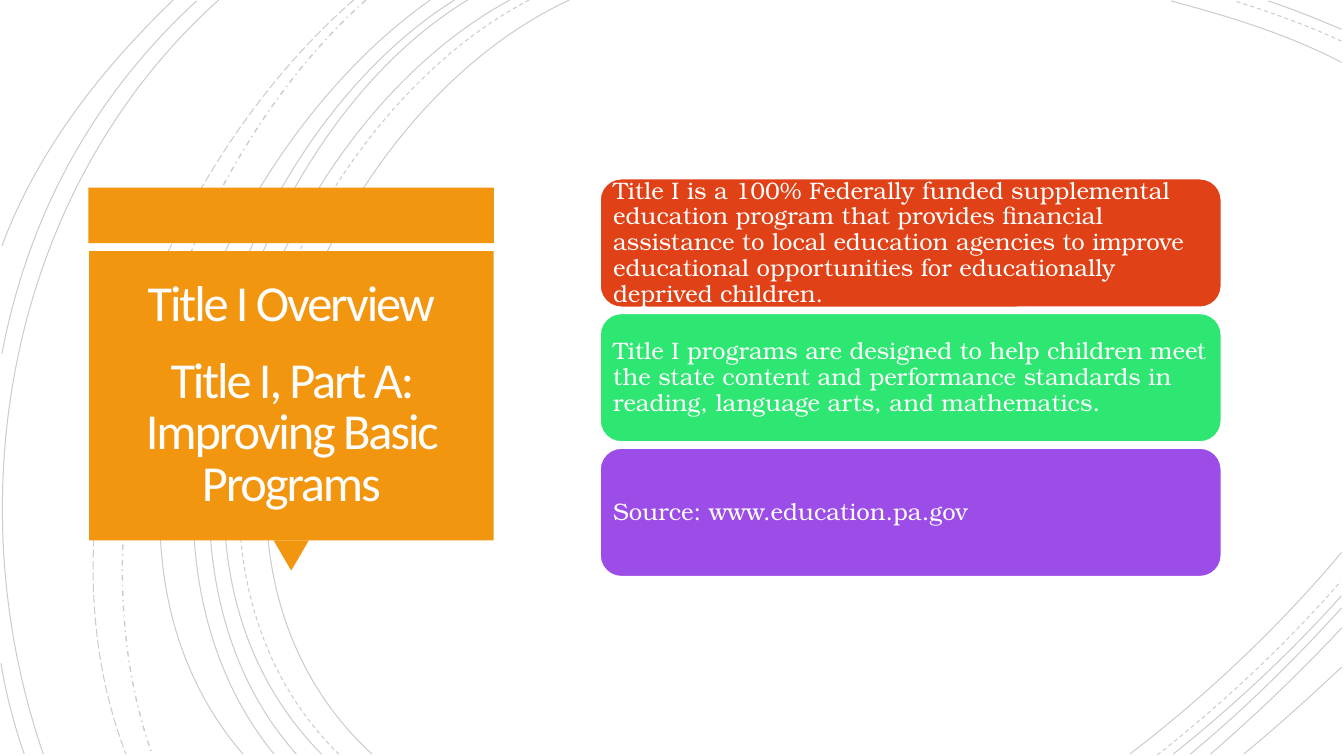
from lxml import etree
from pptx import Presentation
from pptx.dml.color import RGBColor as Rgb
from pptx.enum.dml import MSO_LINE_DASH_STYLE as Dash
from pptx.enum.shapes import MSO_SHAPE as Kind
from pptx.enum.text import MSO_ANCHOR as Anchor, PP_ALIGN as Align
from pptx.oxml.ns import qn
from pptx.util import Pt

COLORS = {"arc": "000000", "title": "F3960F", "ink": "FFFEFF", "white": "FFFFFF",
          "red": "E04116", "green": "2EE772", "violet": "9D4DE7"}

deck = Presentation()
deck.slide_width, deck.slide_height = Pt(960), Pt(540)
slide = deck.slides.add_slide(deck.slide_layouts[6])
shapes = slide.shapes


def add_box(kind, x, y, w, h, fill, line=None):
    box = shapes.add_shape(kind, Pt(x), Pt(y), Pt(w), Pt(h))
    box.shadow.inherit = False
    box.fill.solid()
    box.fill.fore_color.rgb = Rgb.from_string(COLORS[fill])
    if line:
        box.line.color.rgb = Rgb.from_string(COLORS[line])
        box.line.width = Pt(1.25)
    else:
        box.line.fill.background()
    return box


def put_text(box, text, font, size, color, align, gap, pad, track=0):
    frame = box.text_frame
    frame.word_wrap = True
    frame.vertical_anchor = Anchor.MIDDLE
    frame.margin_left = frame.margin_right = Pt(pad)
    frame.margin_top = frame.margin_bottom = Pt(5)
    frame.text = text
    para = frame.paragraphs[0]
    para.alignment, para.line_spacing = align, gap
    for run in para.runs:
        run.font.name, run.font.size = font, Pt(size)
        run.font.color.rgb = Rgb.from_string(COLORS[color])
        if track:
            run.font._element.set("spc", str(track))


# Background arcs: start, two control points, end; then dash style
solid, dash = Dash.SOLID, Dash.DASH
arcs = [
    # Left side
    (406.8, 0, 226.8, 82.8, 103, 388.8, 265.7, 538.6, solid),
    (378, 0, 205.2, 90, 88.6, 386.6, 241.9, 538.6, dash),
    (364.3, 0, 194.4, 91.4, 79.2, 386.6, 229.7, 538.6, solid),
    (334.1, 0, 175.7, 95.8, 79.2, 389.5, 211.7, 538.6, solid),
    (324.7, 0, 166.3, 99.4, 69.8, 383.8, 195.8, 538.6, solid),
    (307.4, 0, 156.2, 105.8, 38.2, 380.9, 173.5, 538.6, solid),
    (261.4, 0, 126.7, 119.5, 46.8, 366.5, 108.7, 538.6, Dash.DASH_DOT),
    (252.7, 0, 113, 121.7, 20.9, 359.3, 90, 538.6, Dash.LONG_DASH),
    (156.2, 0, 7.9, 133.2, -33.1, 352.8, 31, 538.6, solid),
    (140.4, 0.7, 66.2, 69.1, 20.2, 154.1, 1.4, 252.7, solid),
    (0.7, 473.8, 4.3, 496.1, 10.1, 517.7, 17.3, 538.6, solid),
    (123.8, 0, 72, 49.7, 26.6, 108, 1.4, 175.7, solid),
    # Top right corner
    (958.3, 44.6, 920.2, 24.5, 877, 11.5, 836.6, 0.7, solid),
    (958.3, 29.5, 933.8, 18, 907.2, 8.6, 882, 0.7, dash),
    (958.3, 20.9, 941, 13.7, 923.8, 6.5, 905.8, 0.7, solid),
    # Bottom right corner
    (807.1, 538.6, 861.8, 496.8, 913.7, 447.8, 958.3, 394.6, solid),
    (826.6, 539.3, 873.4, 502.6, 918, 460.8, 957.6, 415.4, dash),
    (838.1, 538.6, 880.6, 504.7, 921.6, 466.6, 958.3, 425.5, solid),
    (850.3, 538.6, 888.5, 506.9, 924.5, 471.6, 958.3, 434.2, solid),
    (864.7, 538.6, 897.1, 510.5, 928.8, 480.2, 958.3, 448.6, solid),
    (888.5, 538.6, 912.2, 519.1, 935.3, 498.2, 958.3, 476.6, solid),
]
for *nums, style in arcs:
    pts = [(Pt(x), Pt(y)) for x, y in zip(nums[::2], nums[1::2])]
    pen = shapes.build_freeform(*pts[0])
    pen.add_line_segments(pts[1:], close=False)
    arc = pen.convert_to_shape()
    arc.shadow.inherit = False
    arc.fill.background()
    arc.line.color.rgb = Rgb.from_string(COLORS["arc"])
    arc.line.width = Pt(1 if style == Dash.DASH_DOT else 0.75)
    arc.line.dash_style = style
    # Turn the three segments into one Bezier curve
    legs = list(arc._element.iter(qn("a:lnTo")))
    track = legs[0].getparent()
    curve = etree.SubElement(track, qn("a:cubicBezTo"))
    for leg in legs:
        curve.append(leg[0])
        track.remove(leg)
    # Make the line 20% opaque
    tint = next(arc.line._ln.iter(qn("a:srgbClr")))
    etree.SubElement(tint, qn("a:alpha")).set("val", "20000")

# Title block: bar, pointer and panel
add_box(Kind.RECTANGLE, 63.2, 134, 289.6, 39.8, "title")
tip = add_box(Kind.ISOSCELES_TRIANGLE, 195.4, 386, 25.2, 21.6, "title")
tip.rotation = 180
panel = add_box(Kind.RECTANGLE, 63.6, 179.4, 289, 206.6, "title")
put_text(panel, "Title I Overview\v\vTitle I, Part A: Improving Basic Programs",
         font="Calibri", size=36, color="ink", align=Align.CENTER,
         gap=0.85, pad=24.5, track=-150)

# Cards
cards = [
    ("red", "Title I is a 100% Federally funded supplemental education program that "
            "provides financial assistance to local education agencies to improve "
            "educational opportunities for educationally deprived children."),
    ("green", "Title I programs are designed to help children meet the state content "
              "and performance standards in reading, language arts, and mathematics."),
    ("violet", "Source: www.education.pa.gov"),
]
for row, (fill, text) in enumerate(cards):
    card = add_box(Kind.ROUNDED_RECTANGLE, 428.5, 127.6 + 96.2 * row, 444, 92,
                   fill, line="white")
    put_text(card, text, font="TeX Gyre Bonum", size=17, color="white",
             align=Align.LEFT, gap=0.9, pad=5)

deck.save("out.pptx")
